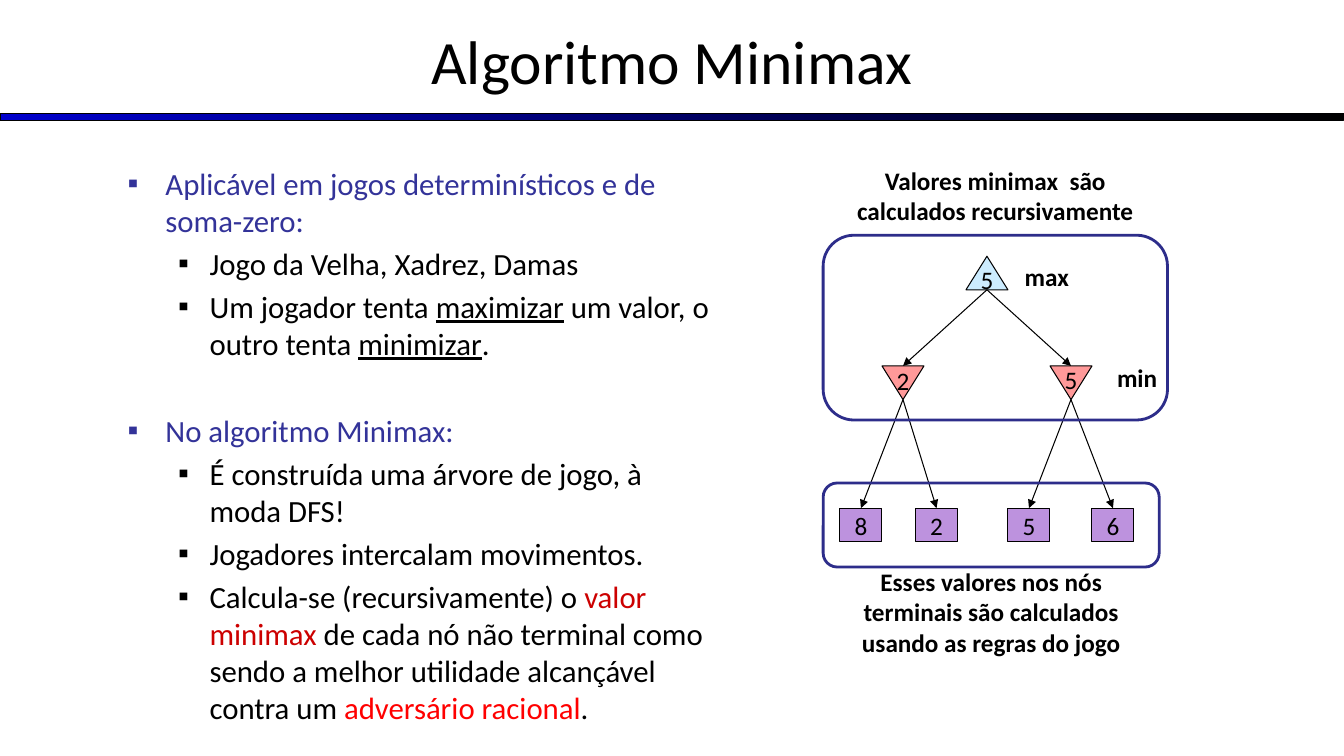
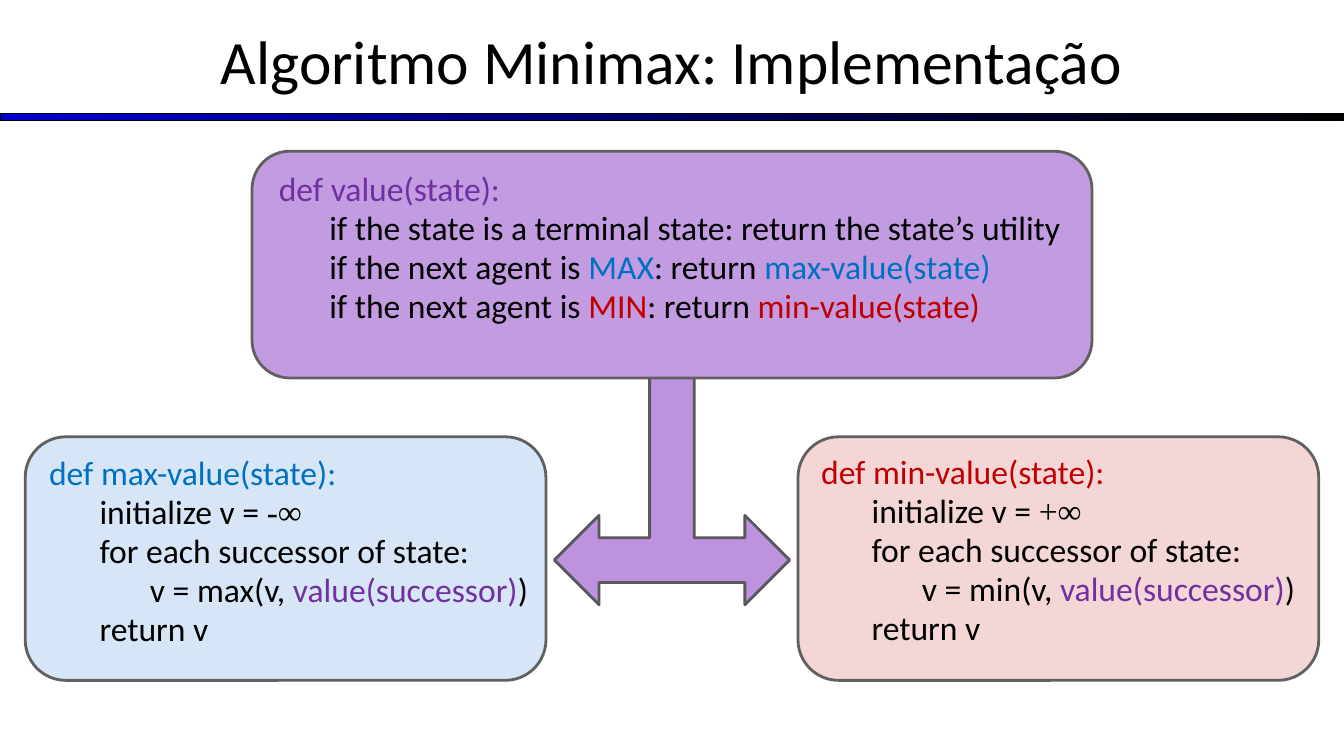
"""Build two slides on the Minimax algorithm: the game tree and its implementation."""
from typing import Any, NamedTuple, Sequence

from lxml import etree
from pptx import Presentation
from pptx.dml.color import RGBColor
from pptx.enum.shapes import MSO_CONNECTOR, MSO_SHAPE
from pptx.enum.text import MSO_ANCHOR, MSO_AUTO_SIZE, PP_ALIGN
from pptx.oxml.ns import qn
from pptx.util import Pt

RECTANGLE = MSO_SHAPE.RECTANGLE
ROUNDED = MSO_SHAPE.ROUNDED_RECTANGLE
TRIANGLE = MSO_SHAPE.ISOSCELES_TRIANGLE
THREE_WAY_ARROW = MSO_SHAPE.LEFT_RIGHT_UP_ARROW
STRAIGHT = MSO_CONNECTOR.STRAIGHT
TOP, MIDDLE = MSO_ANCHOR.TOP, MSO_ANCHOR.MIDDLE
LEFT, CENTER = PP_ALIGN.LEFT, PP_ALIGN.CENTER
NO_AUTOFIT = MSO_AUTO_SIZE.NONE

FONT, MATH_FONT = "Calibri", "Times New Roman"
BLACK, INDIGO, FRAME, GRAY = "000000", "333399", "2D2D8A", "606060"
BLUE, RED, PURPLE, LILAC = "0070C0", "C00000", "7030A0", "BD92DE"
NODE_W, NODE_H = 30, 24


class Box(NamedTuple):
    """Left, top, width and height in points."""
    left: float
    top: float
    width: float
    height: float


class Span(NamedTuple):
    """Piece of a line in one format."""
    text: str
    color: str = BLACK
    font: str = FONT
    underline: bool = False


class Line(NamedTuple):
    """One paragraph with its outline level and the space above it."""
    level: int
    spans: Sequence[Span]
    before: float


class TextStyle(NamedTuple):
    """Size, spacing, margins and bullet that the lines of a text share."""
    size: float
    spacing: float
    margins: Sequence[float]
    hanging: Sequence[float]
    bullet: str = ""


class Node(NamedTuple):
    """Node of the game tree, placed by the middle of its top edge."""
    value: str
    center: float
    top: float
    fill: str
    kind: Any = RECTANGLE
    rotation: float = 0
    digit_shift: float = 0


class Caption(NamedTuple):
    """Bold label beside the game tree."""
    text: str
    box: Box


class CodePanel(NamedTuple):
    """Rounded panel with the pseudocode of one function."""
    box: Box
    fill: str
    opacity: int
    text_box: Box
    lines: Sequence[Line]


LIST_STYLE = TextStyle(22, 1, (27, 58.5), (27, 22.5), "▪")
CODE_STYLE = TextStyle(24, 0.8, (0, 36, 72), (0, 0, 0))


def point(text: str, before: float = 4.4) -> Line:
    """Return a top-level list line."""
    return Line(0, [Span(text, INDIGO)], before)


def detail(*spans: Span) -> Line:
    """Return a second-level list line."""
    return Line(1, spans, 4.4)


def code(level: int, *spans: Span) -> Line:
    """Return a line of pseudocode."""
    return Line(level, spans, 4.8)


def player_code(name: str, color: str, infinity: str) -> list[Line]:
    """Return the pseudocode of one player's value function."""
    return [
        code(0, Span(f"def {name}-value(state):", color)),
        code(1, Span("initialize v = "), Span(infinity, font=MATH_FONT)),
        code(1, Span("for each successor of state:")),
        code(2, Span(f"v = {name}(v, "), Span("value(successor)", PURPLE), Span(")")),
        code(1, Span("return v")),
    ]


POINTS = [
    point("Aplicável em jogos determinísticos e de soma-zero:"),
    detail(Span("Jogo da Velha, Xadrez, Damas")),
    detail(Span("Um jogador tenta "), Span("maximizar", underline=True),
           Span(" um valor, o outro tenta "), Span("minimizar", underline=True), Span(".")),
    point("No algoritmo Minimax:", 35.6),
    detail(Span("É construída uma árvore de jogo, à moda DFS!")),
    detail(Span("Jogadores intercalam movimentos.")),
    detail(Span("Calcula-se (recursivamente) o "), Span("valor minimax ", "CC0000"),
           Span("de cada nó não terminal como sendo a melhor utilidade alcançável contra um "),
           Span("adversário racional", "FF0000"), Span(".")),
]
NODES = [
    Node("5", 705, 183, "CCECFF", TRIANGLE, 0, 2),
    Node("2", 645, 261.4, "FF9999", TRIANGLE, 180, -4),
    Node("5", 765, 261.4, "FF9999", TRIANGLE, 180, -5),
    *(Node(value, center, 363, LILAC)
      for value, center in zip("8256", (615, 669, 735, 795))),
]
BRANCHES = [(0, 1), (0, 2), (1, 3), (1, 4), (2, 5), (2, 6)]
FRAMES = [Box(588, 345, 240, 60), Box(588, 168, 246, 132)]
CAPTIONS = [
    Caption("max", Box(721.5, 183, 52.5, 29)),
    Caption("min", Box(786, 255, 52.5, 29)),
    Caption("Esses valores nos nós terminais são calculados usando as regras do jogo",
            Box(588, 400.5, 240, 73)),
    Caption("Valores minimax  são\vcalculados recursivamente", Box(588, 114, 246, 51)),
]
VALUE_CODE = [
    code(0, Span("def value(state):", PURPLE)),
    code(1, Span("if the state is a terminal state: return the state’s utility")),
    *(code(1, Span("if the next agent is "), Span(name.upper(), color),
           Span(": return "), Span(f"{name}-value(state)", color))
      for name, color in (("max", BLUE), ("min", RED))),
]
VALUE_PANEL = Box(180, 108, 600, 162)
PLAYER_PANELS = [
    CodePanel(Box(570, 312, 372, 174), RED, 16, Box(579.5, 324, 378, 160),
              player_code("min", RED, "+∞")),
    CodePanel(Box(18, 312, 372, 174), "0066CC", 16, Box(28, 325, 378, 160),
              player_code("max", BLUE, "-∞")),
]


def apply_format(target: Any, values: dict[str, Any]) -> None:
    """Set each named attribute on the target."""
    for name, value in values.items():
        setattr(target, name, value)


def paint(fill: Any, color: str) -> None:
    """Fill with a solid hex colour."""
    fill.solid()
    fill.fore_color.rgb = RGBColor.from_string(color)


def place(shape: Any, box: Box) -> None:
    """Move and size a shape."""
    apply_format(shape, {name: Pt(value) for name, value in box._asdict().items()})


def style_run(run: Any, size: float, color: str = BLACK, **extra: Any) -> None:
    """Format one run of text."""
    apply_format(run.font, {"name": FONT, "size": Pt(size), **extra})
    paint(run.font.fill, color)


def add_outline(slide: Any, kind: Any, box: Box, fill: str = "", opacity: int = 100,
                line: str = BLACK, weight: float = 0.75) -> Any:
    """Draw a preset shape, unfilled if no colour is given."""
    shape = slide.shapes.add_shape(kind, *map(Pt, box))
    shape.shadow.inherit = False
    if fill:
        paint(shape.fill, fill)
    else:
        shape.fill.background()
    if opacity < 100:
        tint = shape.element.spPr.find(qn("a:solidFill")).find(qn("a:srgbClr"))
        etree.SubElement(tint, qn("a:alpha")).set("val", str(opacity * 1000))
    paint(shape.line.fill, line)
    shape.line.width = Pt(weight)
    return shape


def write_label(shape: Any, text: str, size: float = 18, anchor: Any = MIDDLE,
                wrap: bool = True, bold: bool = False) -> None:
    """Write one centred paragraph into a shape."""
    apply_format(shape.text_frame, {"word_wrap": wrap, "vertical_anchor": anchor,
                                    "auto_size": NO_AUTOFIT})
    paragraph = shape.text_frame.paragraphs[0]
    apply_format(paragraph, {"text": text, "alignment": CENTER})
    for run in paragraph.runs:
        style_run(run, size, bold=bold)


def write_lines(shape: Any, lines: Sequence[Line], style: TextStyle) -> None:
    """Write an outline of formatted lines into a shape."""
    frame = shape.text_frame
    apply_format(frame, {"word_wrap": True, "vertical_anchor": TOP, "auto_size": NO_AUTOFIT})
    for index, line in enumerate(lines):
        paragraph = frame.add_paragraph() if index else frame.paragraphs[0]
        apply_format(paragraph, {"level": line.level, "alignment": LEFT,
                                 "line_spacing": style.spacing,
                                 "space_before": Pt(line.before)})
        properties = paragraph._p.get_or_add_pPr()
        properties.set("marL", str(Pt(style.margins[line.level])))
        properties.set("indent", str(-Pt(style.hanging[line.level])))
        if style.bullet:
            etree.SubElement(properties, qn("a:buChar")).set("char", style.bullet)
        else:
            etree.SubElement(properties, qn("a:buNone"))
        for span in line.spans:
            run = paragraph.add_run()
            run.text = span.text
            style_run(run, style.size, span.color, name=span.font, underline=span.underline)


def add_branch(slide: Any, parent: Node, child: Node) -> None:
    """Draw an arrow from a node down to its child."""
    ends = (parent.center, parent.top + NODE_H, child.center, child.top)
    branch = slide.shapes.add_connector(STRAIGHT, *map(Pt, ends))
    paint(branch.line.fill, BLACK)
    branch.line.width = Pt(0.75)
    properties = branch.element.spPr
    etree.SubElement(properties.find(qn("a:ln")), qn("a:tailEnd")).set("type", "triangle")
    etree.SubElement(properties, qn("a:effectLst"))


def add_node(slide: Any, node: Node) -> None:
    """Draw a node of the game tree with its value."""
    box = Box(node.center - NODE_W / 2, node.top, NODE_W, NODE_H)
    holder = add_outline(slide, node.kind, box, node.fill)
    holder.rotation = node.rotation
    if node.kind == TRIANGLE:
        digit_box = Box(node.center - 12.25, node.top + node.digit_shift, 24.5, 29)
        holder = slide.shapes.add_textbox(*map(Pt, digit_box))
    write_label(holder, node.value, anchor=TOP if node.kind == TRIANGLE else MIDDLE, wrap=False)


def start_slide(deck: Any, title: str) -> Any:
    """Add a slide with the shared title and gradient band."""
    slide = deck.slides.add_slide(deck.slide_layouts[1])
    band = add_outline(slide, RECTANGLE, Box(0, 81, 960, 5), BLACK)
    band.fill.gradient()
    band.fill.gradient_angle = 0
    for stop, color in zip(band.fill.gradient_stops, ("0000CC", BLACK)):
        stop.color.rgb = RGBColor.from_string(color)
    place(slide.shapes.title, Box(0, -2, 960, 90))
    write_label(slide.shapes.title, title, 44)
    return slide


def build_tree_slide(deck: Any) -> None:
    """Build the slide with the game tree."""
    slide = start_slide(deck, "Algoritmo Minimax")
    body = slide.placeholders[1]
    place(body, Box(84, 114, 432, 356))
    write_lines(body, POINTS, LIST_STYLE)
    for node in NODES:
        add_node(slide, node)
    for parent, child in BRANCHES:
        add_branch(slide, NODES[parent], NODES[child])
    for frame in FRAMES:
        add_outline(slide, ROUNDED, frame, line=FRAME, weight=2)
    for caption in CAPTIONS:
        write_label(slide.shapes.add_textbox(*map(Pt, caption.box)), caption.text, bold=True)


def build_code_slide(deck: Any) -> None:
    """Build the slide with the pseudocode."""
    slide = start_slide(deck, "Algoritmo Minimax: Implementação")
    calls = add_outline(slide, THREE_WAY_ARROW, Box(396, 228, 168, 204), LILAC,
                        line="595959", weight=2)
    for index, ratio in enumerate((0.19, 0.19, 0.19)):
        calls.adjustments[index] = ratio
    for panel in PLAYER_PANELS:
        add_outline(slide, ROUNDED, panel.box, panel.fill, panel.opacity, GRAY, 2)
        write_lines(slide.shapes.add_textbox(*map(Pt, panel.text_box)), panel.lines, CODE_STYLE)
    add_outline(slide, ROUNDED, VALUE_PANEL, "C39BE1", line=GRAY, weight=2)
    body = slide.placeholders[1]
    place(body, Box(192, 122, 648, 140))
    write_lines(body, VALUE_CODE, CODE_STYLE)
    body.element.getparent().append(body.element)


def main() -> None:
    """Build and save the deck."""
    deck = Presentation()
    apply_format(deck, {"slide_width": Pt(960), "slide_height": Pt(540)})
    build_tree_slide(deck)
    build_code_slide(deck)
    deck.save("out.pptx")


if __name__ == "__main__":
    main()
